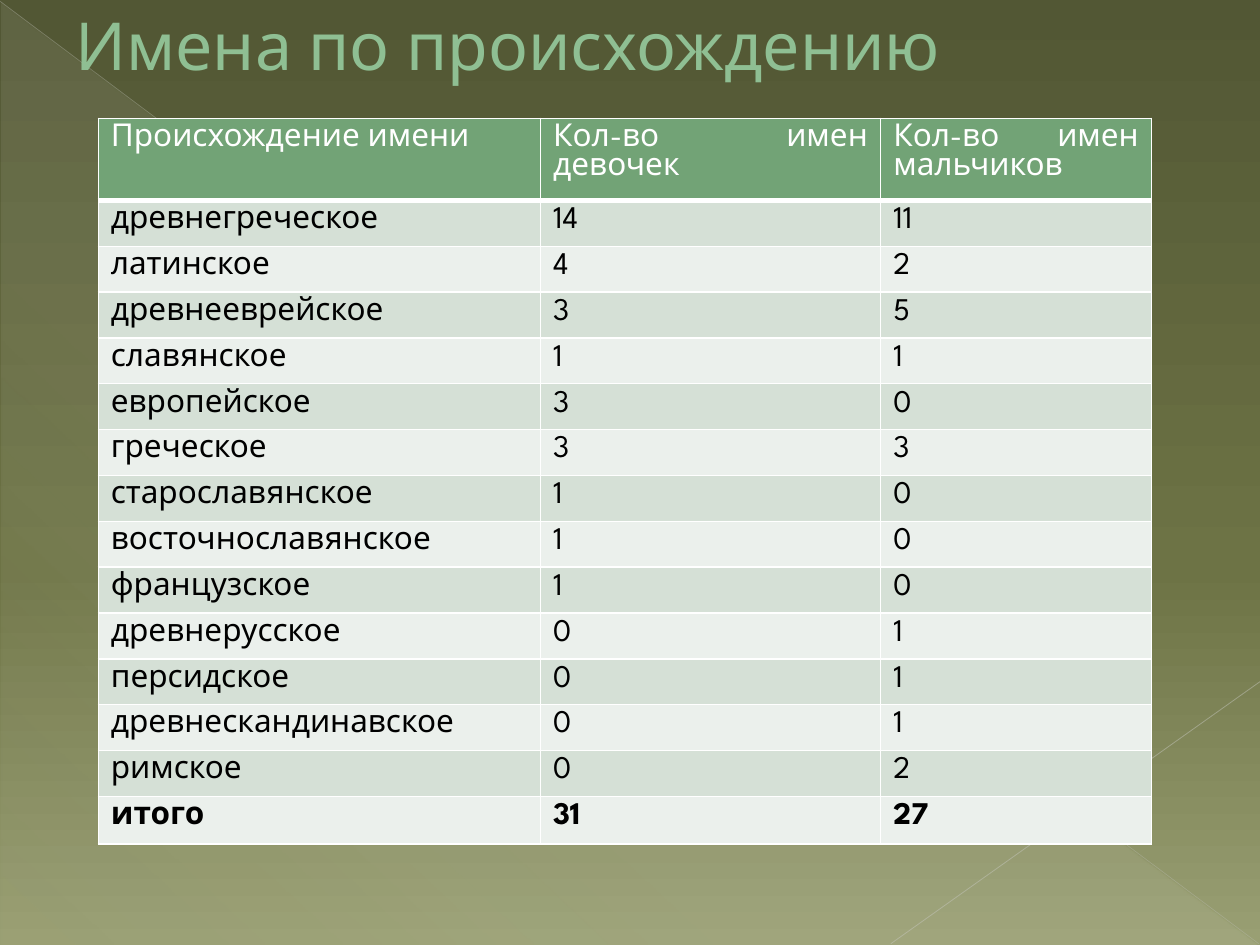
import pptx
import pptx.util
import pptx.dml.color
import pptx.enum.shapes
import pptx.enum.text
import pptx.oxml
import pptx.oxml.ns
from lxml import etree

Inches = pptx.util.Inches
Pt = pptx.util.Pt

TITLE = "Имена по происхождению"
HEADER = ("Происхождение имени", "Кол-во имен девочек", "Кол-во имен мальчиков")
ORIGINS = [
    ("древнегреческое", 14, 11),
    ("латинское", 4, 2),
    ("древнееврейское", 3, 5),
    ("славянское", 1, 1),
    ("европейское", 3, 0),
    ("греческое", 3, 3),
    ("старославянское", 1, 0),
    ("восточнославянское", 1, 0),
    ("французское", 1, 0),
    ("древнерусское", 0, 1),
    ("персидское", 0, 1),
    ("древнескандинавское", 0, 1),
    ("римское", 0, 2),
]
TOTAL = ("итого", 31, 27)

FONT = "League Spartan"
COLORS = {
    "title": "8FBF93", "title_outline": "4F7152",
    "header": "72A376", "band_dark": "D5E0D6", "band_light": "EBF0EC",
    "border": "FFFFFF", "header_text": "FFFFFF", "text": "000000",
    "triangle": "EAEBDE", "long_line": "C1C3B9", "short_line": "C8C9C1",
}
# Gradient stops: position %, colour, opacity %
BACKGROUND = [(0, "525734", 100), (60, "6D7345", 100), (100, "999F73", 100)]
TRIANGLE = [(0, COLORS["triangle"], 10), (70, COLORS["triangle"], 8),
            (100, COLORS["triangle"], 1)]
# Start, end, colour, width in points, opacity %
LINES = [
    ((0, 0.01), (9.99, 7.49), COLORS["long_line"], 0.39, 35),
    ((10, 5.41), (7.07, 7.49), COLORS["short_line"], 0.47, 45),
]
COLUMN_WIDTHS = (3.51, 2.7, 2.15)
TABLE_HEIGHT, HEADER_HEIGHT, TOTAL_HEIGHT = 5.68, 0.57, 0.38
ROW_HEIGHT = (TABLE_HEIGHT - HEADER_HEIGHT - TOTAL_HEIGHT) / len(ORIGINS)


def rgb(name):
    return pptx.dml.color.RGBColor.from_string(COLORS[name])


def add_child(parent, tag, **attributes):
    child = etree.SubElement(parent, pptx.oxml.ns.qn(tag))
    for name, value in attributes.items():
        child.set(name, str(value))
    return child


def add_color(parent, color, opacity=100):
    node = add_child(parent, "a:srgbClr", val=color)
    if opacity < 100:
        add_child(node, "a:alpha", val=opacity * 1000)


def set_gradient(fill, holder, stops, angle):
    """Fill with a linear gradient; the angle runs clockwise in degrees."""
    fill.solid()
    solid = holder.find(".//" + pptx.oxml.ns.qn("a:solidFill"))
    gradient = pptx.oxml.parse_xml(
        f'<a:gradFill {pptx.oxml.ns.nsdecls("a")} rotWithShape="1"/>')
    stop_list = add_child(gradient, "a:gsLst")
    for position, color, opacity in stops:
        add_color(add_child(stop_list, "a:gs", pos=position * 1000), color, opacity)
    add_child(gradient, "a:lin", ang=angle * 60000, scaled=0)
    solid.getparent().replace(solid, gradient)


def add_backdrop(page):
    set_gradient(page.background.fill, page.element, BACKGROUND, 90)
    triangle = page.shapes.add_shape(
        pptx.enum.shapes.MSO_SHAPE.RIGHT_TRIANGLE,
        Inches(0.01), Inches(0.02), Inches(9.98), Inches(7.48))
    triangle.shadow.inherit = False
    triangle.line.fill.background()
    set_gradient(triangle.fill, triangle.element.spPr, TRIANGLE, 133)
    for start, end, color, width, opacity in LINES:
        line = page.shapes.add_connector(
            pptx.enum.shapes.MSO_CONNECTOR.STRAIGHT,
            *(Inches(value) for value in start + end))
        line.line.width = Pt(width)
        line.line.color.rgb = pptx.dml.color.RGBColor.from_string(color)
        properties = line.element.spPr
        shade = properties.find(".//" + pptx.oxml.ns.qn("a:srgbClr"))
        add_child(shade, "a:alpha", val=opacity * 1000)
        add_child(properties, "a:effectLst")


def add_title(page):
    box = page.shapes.add_textbox(Inches(0.5), 0, Inches(9), Inches(0.7))
    frame = box.text_frame
    frame.word_wrap = True
    frame.vertical_anchor = pptx.enum.text.MSO_ANCHOR.MIDDLE
    span = frame.paragraphs[0].add_run()
    span.text = TITLE
    span.font.name = FONT
    span.font.size = Pt(37.8)
    span.font.color.rgb = rgb("title")
    properties = span.font._element
    outline = add_child(properties, "a:ln", w=Pt(0.5))
    add_color(add_child(outline, "a:solidFill"), COLORS["title_outline"])
    properties.insert(0, outline)


def set_borders(cell, bottom):
    properties = cell._tc.get_or_add_tcPr()
    for side, width in (("L", 1), ("R", 1), ("T", 1), ("B", bottom)):
        border = add_child(properties, f"a:ln{side}", w=Pt(width))
        add_color(add_child(border, "a:solidFill"), COLORS["border"])


def write_cell(cell, text, color, bold, alignment):
    """Set fonts on the run, since row heights are measured from it."""
    para = cell.text_frame.paragraphs[0]
    para.alignment = alignment
    span = para.add_run()
    span.text = text
    span.font.name = FONT
    span.font.size = Pt(18)
    span.font.bold = bold
    span.font.color.rgb = rgb(color)
    end = add_child(para._p, "a:endParaRPr", sz=1800)
    add_child(end, "a:latin", typeface=FONT)
    cell.margin_bottom = 0


def add_names_table(page):
    rows = [HEADER, *ORIGINS, TOTAL]
    heights = [HEADER_HEIGHT, *[ROW_HEIGHT] * len(ORIGINS), TOTAL_HEIGHT]
    table = page.shapes.add_table(
        len(rows), len(HEADER), Inches(0.78), Inches(0.94),
        Inches(sum(COLUMN_WIDTHS)), Inches(TABLE_HEIGHT)).table
    for column, width in zip(table.columns, COLUMN_WIDTHS):
        column.width = Inches(width)
    align = pptx.enum.text.PP_ALIGN
    for index, (values, height) in enumerate(zip(rows, heights)):
        table.rows[index].height = Inches(height)
        is_header = index == 0
        band = "header" if is_header else "band_dark" if index % 2 else "band_light"
        for cell, value in zip(table.rows[index].cells, values):
            write_cell(cell, str(value), "header_text" if is_header else "text",
                       values is TOTAL, align.JUSTIFY if is_header else align.LEFT)
            set_borders(cell, 3 if is_header else 1)
            cell.fill.solid()
            cell.fill.fore_color.rgb = rgb(band)


def main():
    deck = pptx.Presentation()
    deck.slide_width, deck.slide_height = Inches(10), Inches(7.5)
    page = deck.slides.add_slide(deck.slide_layouts[6])
    add_backdrop(page)
    add_title(page)
    add_names_table(page)
    deck.save("out.pptx")


if __name__ == "__main__":
    main()
